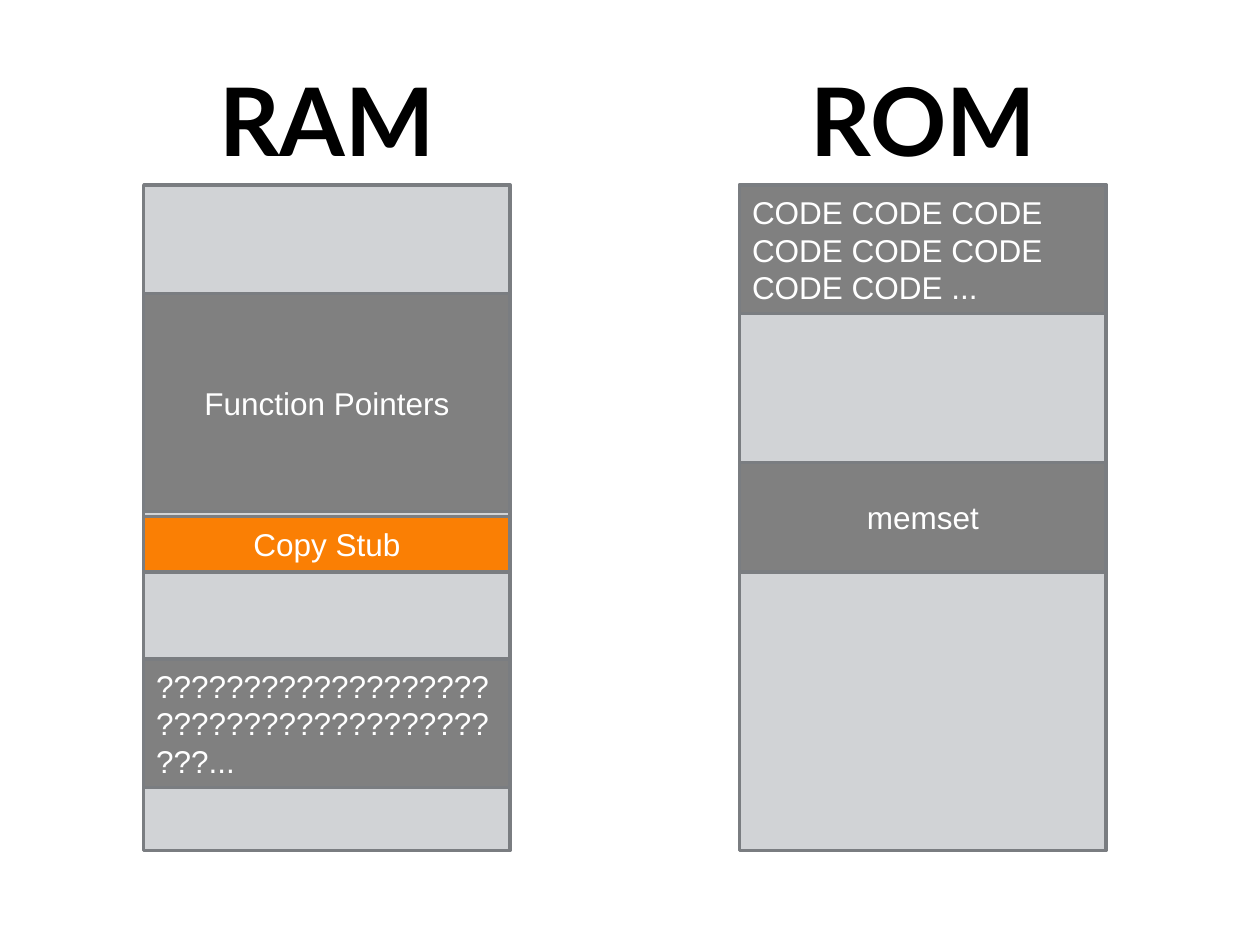
from dataclasses import dataclass

from lxml.etree import SubElement
from pptx import Presentation
from pptx.dml.color import RGBColor
from pptx.enum.shapes import MSO_SHAPE
from pptx.enum.text import MSO_ANCHOR, MSO_AUTO_SIZE, PP_ALIGN
from pptx.oxml.ns import qn
from pptx.util import Inches, Pt


@dataclass(frozen=True)
class Theme:
    memory: str = "A5A9AF"
    block: str = "808080"
    stub: str = "FA7F04"
    outline: str = "7A7D81"
    light: str = "FFFFFF"
    dark: str = "000000"
    heading_font: str = "Lato"
    block_font: str = "Arial"
    heading_size: int = 54
    block_size: int = 18
    outline_width: int = 2


THEME = Theme()
CENTER, LEFT = PP_ALIGN.CENTER, PP_ALIGN.LEFT

# Each block: text, top, height, fill, alignment
MEMORIES = [
    ("RAM", [
        ("Function Pointers", 2.33, 1.73, THEME.block, CENTER),
        ("Copy Stub", 4.1, 0.44, THEME.stub, CENTER),
        ("?" * 41 + "...", 5.23, 1.02, THEME.block, LEFT),
    ]),
    ("ROM", [
        ("CODE CODE CODE CODE CODE CODE CODE CODE ...", 1.47, 1.02, THEME.block, LEFT),
        ("memset", 3.67, 0.87, THEME.block, CENTER),
    ]),
]
HEADING_IDS = (1, 3)  # column headings of the Comparison layout
FIRST_LEFT, COLUMN_STEP, COLUMN_WIDTH = 1.14, 4.73, 2.91
HEADING_TOP, HEADING_HEIGHT = 0.44, 1.01
MEMORY_TOP, MEMORY_HEIGHT = 1.47, 5.28


def write(tf, text, font, size, color, align, bold=False):
    tf.word_wrap = True
    tf.text = text
    p = tf.paragraphs[0]
    p.alignment = align
    p.space_before = Pt(0)
    f = p.runs[0].font
    f.name, f.size, f.bold = font, Pt(size), bold
    f.color.rgb = RGBColor.from_string(color)


def add_box(slide, left, top, height, color):
    sp = slide.shapes.add_shape(MSO_SHAPE.RECTANGLE, Inches(left), Inches(top),
                                Inches(COLUMN_WIDTH), Inches(height))
    sp.shadow.inherit = False
    sp.fill.solid()
    sp.fill.fore_color.rgb = RGBColor.from_string(color)
    sp.line.color.rgb = RGBColor.from_string(THEME.outline)
    sp.line.width = Pt(THEME.outline_width)
    return sp


def set_opacity(sp, percent):
    color = sp.fill._xPr.find(qn("a:solidFill"))[0]
    SubElement(color, qn("a:alpha")).set("val", str(percent * 1000))


def add_memory(slide, heading, left, name, blocks):
    heading.left, heading.top = Inches(left), Inches(HEADING_TOP)
    heading.width, heading.height = Inches(COLUMN_WIDTH), Inches(HEADING_HEIGHT)
    tf = heading.text_frame
    tf.auto_size = MSO_AUTO_SIZE.NONE
    tf.vertical_anchor = MSO_ANCHOR.TOP
    write(tf, name, THEME.heading_font, THEME.heading_size, THEME.dark, CENTER, bold=True)

    set_opacity(add_box(slide, left, MEMORY_TOP, MEMORY_HEIGHT, THEME.memory), 50)
    for text, top, height, color, align in blocks:
        sp = add_box(slide, left, top, height, color)
        sp.text_frame.vertical_anchor = MSO_ANCHOR.MIDDLE
        write(sp.text_frame, text, THEME.block_font, THEME.block_size, THEME.light, align)


def main():
    prs = Presentation()
    prs.slide_width, prs.slide_height = Inches(10), Inches(7.5)
    s = prs.slides.add_slide(prs.slide_layouts.get_by_name("Comparison"))
    headings = {}
    for sp in list(s.placeholders):
        idx = sp.placeholder_format.idx
        if idx in HEADING_IDS:
            headings[idx] = sp
        else:
            sp.element.getparent().remove(sp.element)
    for col, (idx, (name, blocks)) in enumerate(zip(HEADING_IDS, MEMORIES)):
        add_memory(s, headings[idx], FIRST_LEFT + col * COLUMN_STEP, name, blocks)
    prs.save("out.pptx")


if __name__ == "__main__":
    main()
